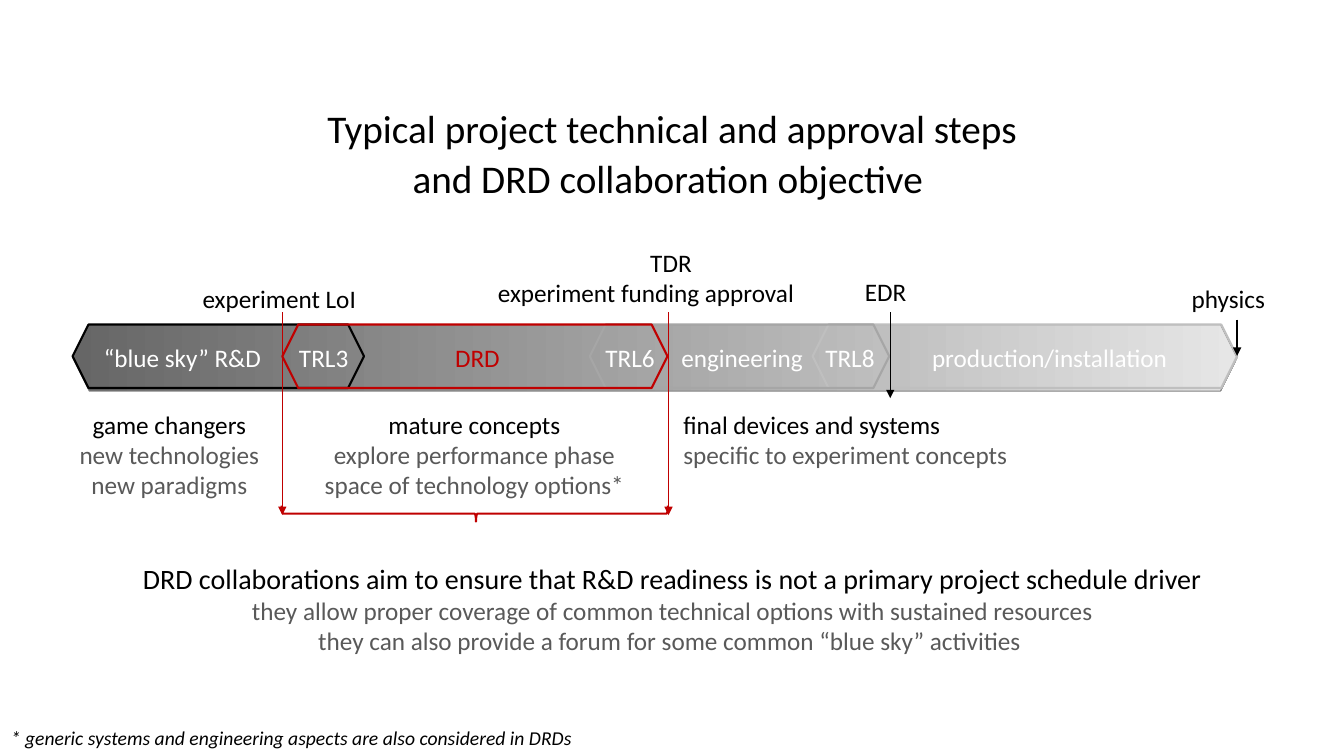
from lxml import etree
from pptx import Presentation
from pptx.dml.color import RGBColor
from pptx.enum.shapes import MSO_CONNECTOR, MSO_SHAPE
from pptx.enum.text import MSO_AUTO_SIZE, PP_ALIGN
from pptx.oxml.ns import qn
from pptx.util import Inches, Pt

STRAIGHT = MSO_CONNECTOR.STRAIGHT
HEXAGON, LEFT_BRACE = MSO_SHAPE.HEXAGON, MSO_SHAPE.LEFT_BRACE
LEFT, CENTER = PP_ALIGN.LEFT, PP_ALIGN.CENTER
GROW = MSO_AUTO_SIZE.SHAPE_TO_FIT_TEXT

COLORS = {
    "black": "000000", "white": "FFFFFF", "red": "C00000", "text_gray": "595959",
    "bar_start": "666666", "bar_end": "E6E6E6", "bar_line": "808080",
    "production": "BFBFBF", "engineering": "A6A6A6",
}
FONT = "Calibri"

# Content: lines are (text, size, color)
TITLE = [("Typical project technical and approval steps", 28, "black"),
         ("and DRD collaboration objective ", 28, "black")]
CONCLUSION = [
    ("DRD collaborations aim to ensure that R&D readiness is not a primary project schedule driver",
     20, "black"),
    ("they allow proper coverage of common technical options with sustained resources",
     18, "text_gray"),
    ("they can also provide a forum for some common “blue sky” activities ", 18, "text_gray"),
]
FOOTNOTE = "* generic systems and engineering aspects are also considered in DRDs"

# Milestones: left, top, width, height, alignments, lines
MILESTONES = [
    (1.8, 2.76, 1.94, 0.4, [CENTER], ["experiment LoI"]),
    (4.84, 2.4, 3.63, 0.71, [CENTER, LEFT], ["TDR", "experiment funding approval"]),
    (8.48, 2.69, 0.73, 0.4, [LEFT], ["EDR"]),
    (11.72, 2.76, 1.11, 0.4, [LEFT], ["physics"]),
]
# Arrows: x, top, bottom, color
ARROWS = [
    (2.8, 3.1, 5.11, "red"),
    (6.63, 3.1, 5.11, "red"),
    (8.83, 3.1, 3.95, "black"),
    (12.27, 3.17, 3.53, "black"),
]
# Phases: left, width, outline color, from back to front
PHASES = [(0.72, 2.89, "black"), (8.06, 4.21, "production"),
          (5.85, 2.97, "engineering"), (2.8, 3.82, "red")]
# Labels on the bar: left, width, text, color
BAR_LABELS = [
    (0.75, 2.12, "“blue sky” R&D", "white"),
    (2.77, 0.88, "TRL3", "white"),
    (3.88, 1.71, "DRD", "red"),
    (5.81, 0.88, "TRL6", "white"),
    (6.55, 1.62, "engineering", "white"),
    (7.99, 0.88, "TRL8", "white"),
    (8.89, 3.04, "production/installation", "white"),
]
# Descriptions: left, width, height, alignment, heading, details
DESCRIPTIONS = [
    (0.51, 2.34, 1.01, CENTER, "game changers", ["new technologies", "new paradigms"]),
    (2.93, 3.55, 1.01, CENTER, "mature concepts",
     ["explore performance phase space of technology options*"]),
    (6.68, 4.03, 0.71, LEFT, "final devices and systems", ["specific to experiment concepts"]),
]
BAR_TOP, PHASE_HEIGHT, BAR_HEIGHT = 3.22, 0.63, 0.66
LABEL_TOP, DESCRIPTION_TOP = 3.35, 4.01


def color(name):
    return RGBColor.from_string(COLORS[name])


def add_text(slide, box, lines, alignments, italic=False, wrap=True, space_after=0):
    shape = slide.shapes.add_textbox(*map(Inches, box))
    frame = shape.text_frame
    frame.word_wrap = wrap
    frame.auto_size = GROW
    for index, (text, size, color_name) in enumerate(lines):
        paragraph = frame.paragraphs[0] if index == 0 else frame.add_paragraph()
        paragraph.alignment = alignments[min(index, len(alignments) - 1)]
        paragraph.space_after = Pt(space_after)
        run = paragraph.add_run()
        run.text = text
        run.font.name = FONT
        run.font.size = Pt(size)
        run.font.italic = italic
        run.font.color.rgb = color(color_name)


def add_outline(slide, kind, box, line_color, width=1.5):
    shape = slide.shapes.add_shape(kind, *map(Inches, box))
    shape.shadow.inherit = False
    shape.fill.background()
    shape.line.color.rgb = color(line_color)
    shape.line.width = Pt(width)
    return shape


def add_arrow(slide, x, top, bottom, color_name):
    connector = slide.shapes.add_connector(
        STRAIGHT, Inches(x), Inches(top), Inches(x), Inches(bottom))
    connector.line.color.rgb = color(color_name)
    connector.line.width = Pt(1)
    etree.SubElement(connector.line._get_or_add_ln(), qn("a:tailEnd"), type="triangle")
    etree.SubElement(connector._element.spPr, qn("a:effectLst"))


def main():
    presentation = Presentation()
    presentation.slide_width = Inches(13.33)
    presentation.slide_height = Inches(7.5)
    slide = presentation.slides.add_slide(presentation.slide_layouts[6])

    # Title and milestones
    add_text(slide, (0.52, 0.99, 12.29, 1.07), TITLE, [CENTER], space_after=2)
    for *box, alignments, lines in MILESTONES:
        add_text(slide, box, [(line, 18, "black") for line in lines], alignments)

    # Shaded bar with the outline of each phase
    bar = add_outline(slide, HEXAGON, (0.72, BAR_TOP, 11.55, BAR_HEIGHT), "bar_line", 0.75)
    bar.fill.gradient()
    bar.fill.gradient_angle = 0
    for stop, name in zip(bar.fill.gradient_stops, ("bar_start", "bar_end")):
        stop.color.rgb = color(name)
    for left, width, line_color in PHASES:
        add_outline(slide, HEXAGON, (left, BAR_TOP, width, PHASE_HEIGHT), line_color)
    for left, width, text, color_name in BAR_LABELS:
        add_text(slide, (left, LABEL_TOP, width, 0.4), [(text, 18, color_name)], [CENTER])

    # Descriptions under the bar
    for left, width, height, alignment, heading, details in DESCRIPTIONS:
        lines = [(heading, 18, "black")] + [(detail, 18, "text_gray") for detail in details]
        add_text(slide, (left, DESCRIPTION_TOP, width, height), lines, [alignment])

    # Brace and arrows
    brace = add_outline(slide, LEFT_BRACE, (4.63, 3.18, 0.16, 3.83), "red")
    brace.rotation = 270
    brace.adjustments[1] = 0.503
    for arrow in ARROWS:
        add_arrow(slide, *arrow)

    # Conclusion and footnote
    add_text(slide, (0.37, 5.52, 12.6, 1.04), CONCLUSION, [CENTER])
    add_text(slide, (0.01, 7.15, 6.64, 0.34), [(FOOTNOTE, 14, "black")], [LEFT],
             italic=True, wrap=False)

    presentation.save("out.pptx")


if __name__ == "__main__":
    main()
